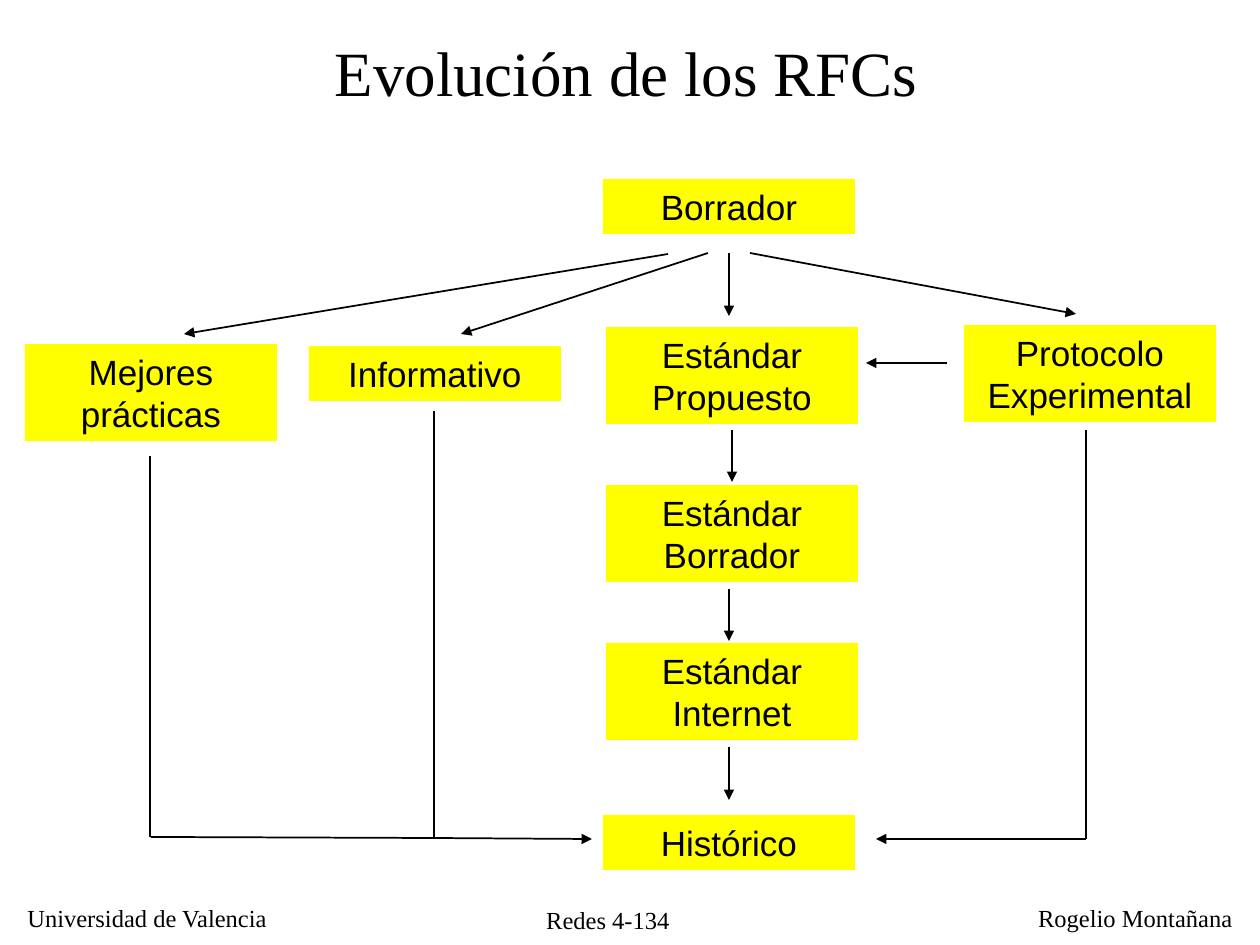
from typing import NamedTuple

from lxml.etree import SubElement
from pptx import Presentation
from pptx.dml.color import RGBColor
from pptx.enum.shapes import MSO_CONNECTOR, MSO_SHAPE
from pptx.enum.text import MSO_ANCHOR, PP_ALIGN
from pptx.oxml.ns import qn
from pptx.util import Emu, Pt

PX_PER_INCH = 126
COLORS = {"ink": "000000", "box": "FFFF00", "paper": "FFFFFF"}
SERIF, SANS = "Times New Roman", "Arial"
BOX_WIDTH, ONE_LINE, TWO_LINES = 252, 55, 97


class Stage(NamedTuple):
    name: str
    left: int
    top: int
    height: int = TWO_LINES


class Link(NamedTuple):
    start: tuple[int, int]
    end: tuple[int, int]
    arrow: bool = True


class Label(NamedTuple):
    wording: str
    left: int
    top: int
    width: int
    height: int
    size: int = 14
    align: PP_ALIGN = PP_ALIGN.LEFT


LABELS = [
    Label("Redes 4-134", 526, 899, 164, 38, align=PP_ALIGN.CENTER),
    Label("Universidad de Valencia", 15, 897, 276, 42),
    Label("Rogelio Montañana", 1017, 897, 228, 42, align=PP_ALIGN.RIGHT),
    Label("Evolución de los RFCs", 306, 27, 640, 88, 36, PP_ALIGN.CENTER),
]

STAGES = [
    Stage("Borrador", 603, 179, ONE_LINE),
    Stage("Mejores prácticas", 25, 344),
    Stage("Informativo", 309, 346, ONE_LINE),
    Stage("Protocolo Experimental", 964, 325),
    Stage("Estándar Propuesto", 606, 327),
    Stage("Estándar Borrador", 606, 485),
    Stage("Estándar Internet", 606, 643),
    Stage("Histórico", 603, 815, ONE_LINE),
]

LINKS = [
    # From the draft to the four kinds of RFC
    Link((668, 254), (184, 334)),
    Link((708, 253), (461, 334)),
    Link((729, 253), (729, 316)),
    Link((750, 253), (1076, 314)),
    # Along the standards track
    Link((947, 363), (866, 363)),
    Link((732, 430), (732, 482)),
    Link((729, 589), (729, 641)),
    Link((729, 747), (729, 800)),
    # Down to historic
    Link((150, 456), (150, 837), arrow=False),
    Link((434, 411), (434, 839), arrow=False),
    Link((1086, 430), (1086, 839), arrow=False),
    Link((151, 837), (434, 838), arrow=False),
    Link((434, 838), (592, 839)),
    Link((1086, 839), (876, 839)),
]


def px(length: int) -> Emu:
    return Emu(round(length * 914400 / PX_PER_INCH))


def color(key: str) -> RGBColor:
    return RGBColor.from_string(COLORS[key])


def write(shape, wording: str, font: str, size: int, align: PP_ALIGN) -> None:
    frame = shape.text_frame
    frame.word_wrap = True
    frame.vertical_anchor = MSO_ANCHOR.TOP
    paragraph = frame.paragraphs[0]
    paragraph.alignment = align
    run = paragraph.add_run()
    run.text = wording
    run.font.name = font
    run.font.size = Pt(size)
    run.font.color.rgb = color("ink")


def draw_label(slide, label: Label) -> None:
    box = slide.shapes.add_textbox(
        px(label.left), px(label.top), px(label.width), px(label.height))
    write(box, label.wording, SERIF, label.size, label.align)


def draw_stage(slide, stage: Stage) -> None:
    box = slide.shapes.add_shape(
        MSO_SHAPE.RECTANGLE,
        px(stage.left), px(stage.top), px(BOX_WIDTH), px(stage.height))
    box.shadow.inherit = False
    box.fill.solid()
    box.fill.fore_color.rgb = color("box")
    box.line.fill.background()
    write(box, stage.name, SANS, 20, PP_ALIGN.CENTER)


def draw_link(slide, link: Link) -> None:
    connector = slide.shapes.add_connector(
        MSO_CONNECTOR.STRAIGHT, *map(px, link.start + link.end))
    connector.line.width = Pt(1)
    connector.line.color.rgb = color("ink")
    if link.arrow:
        SubElement(connector.line._get_or_add_ln(), qn("a:tailEnd"), type="triangle")
    SubElement(connector._element.spPr, qn("a:effectLst"))


def main() -> None:
    presentation = Presentation()
    presentation.slide_width, presentation.slide_height = px(1260), px(945)
    slide = presentation.slides.add_slide(presentation.slide_layouts[6])
    slide.background.fill.solid()
    slide.background.fill.fore_color.rgb = color("paper")

    # Title and footer
    for label in LABELS:
        draw_label(slide, label)
    # Flow diagram
    for stage in STAGES:
        draw_stage(slide, stage)
    for link in LINKS:
        draw_link(slide, link)

    presentation.save("out.pptx")


if __name__ == "__main__":
    main()
